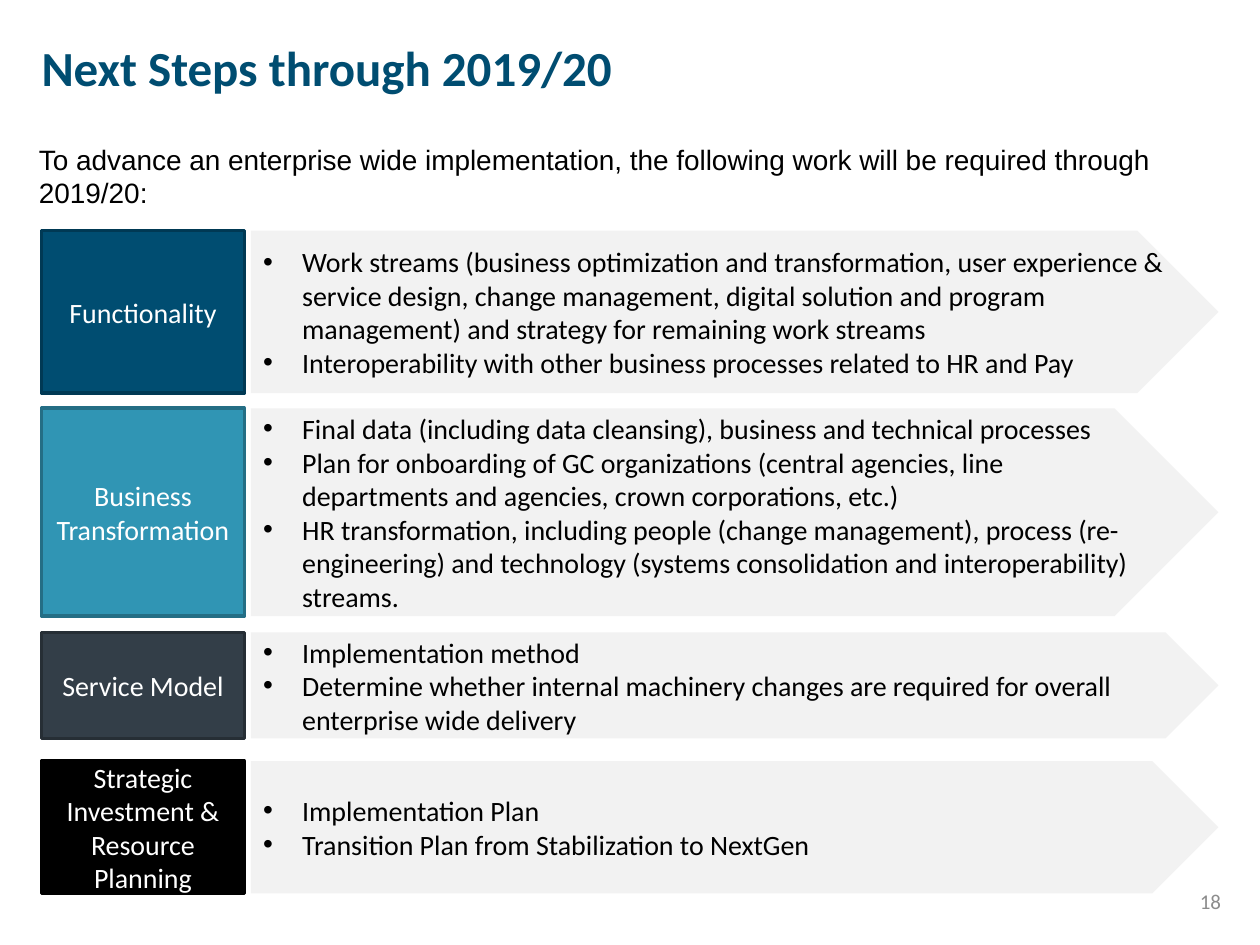
from lxml import etree
from pptx import Presentation
from pptx.dml.color import RGBColor
from pptx.enum.shapes import MSO_SHAPE
from pptx.enum.text import MSO_ANCHOR, PP_ALIGN
from pptx.oxml.ns import qn
from pptx.util import Inches, Pt

LEFT, CENTER, RIGHT = PP_ALIGN.LEFT, PP_ALIGN.CENTER, PP_ALIGN.RIGHT
TOP, MIDDLE = MSO_ANCHOR.TOP, MSO_ANCHOR.MIDDLE
RECTANGLE, ARROW = MSO_SHAPE.RECTANGLE, MSO_SHAPE.PENTAGON

NAVY, NAVY_EDGE = RGBColor(0x00, 0x4D, 0x71), RGBColor(0x00, 0x39, 0x54)
TEAL, TEAL_EDGE = RGBColor(0x30, 0x95, 0xB4), RGBColor(0x24, 0x6E, 0x85)
SLATE, SLATE_EDGE = RGBColor(0x33, 0x3E, 0x48), RGBColor(0x26, 0x2E, 0x35)
BLACK, WHITE = RGBColor(0, 0, 0), RGBColor(0xFF, 0xFF, 0xFF)
PALE, GREY = RGBColor(0xF2, 0xF2, 0xF2), RGBColor(0x8C, 0x8C, 0x8C)

TITLE = "Next Steps through 2019/20"
INTRO = ("To advance an enterprise wide implementation, the following work "
         "will be required through 2019/20:")
PAGE_NUMBER = "18"

# name, fill, edge, top, height, steps
STREAMS = [
    ("Functionality", NAVY, NAVY_EDGE, 1.83, 1.29, [
        "Work streams (business optimization and transformation, user experience & "
        "service design, change management, digital solution and program "
        "management) and strategy for remaining work streams",
        "Interoperability with other business processes related to HR and Pay",
    ]),
    ("Business Transformation", TEAL, TEAL_EDGE, 3.24, 1.65, [
        "Final data (including data cleansing), business and technical processes",
        "Plan for onboarding of GC organizations (central agencies, line "
        "departments and agencies, crown corporations, etc.)",
        "HR transformation, including people (change management), process "
        "(re-engineering) and technology (systems consolidation and "
        "interoperability) streams.",
    ]),
    ("Service Model", SLATE, SLATE_EDGE, 5.02, 0.84, [
        "Implementation method",
        "Determine whether internal machinery changes are required for overall "
        "enterprise wide delivery",
    ]),
    ("Strategic Investment & Resource Planning", BLACK, BLACK, 6.04, 1.05, [
        "Implementation Plan",
        "Transition Plan from Stabilization to NextGen",
    ]),
]

MARGIN, NAME_WIDTH, GUTTER, STEPS_WIDTH = 0.33, 1.61, 0.05, 7.68
STEPS_LEFT = MARGIN + NAME_WIDTH + GUTTER
BULLET_INDENT = Inches(0.31)


def add_bullet(paragraph):
    properties = paragraph._p.get_or_add_pPr()
    properties.set("marL", str(BULLET_INDENT))
    properties.set("indent", str(-BULLET_INDENT))
    etree.SubElement(properties, qn("a:buFont")).set("typeface", "Arial")
    etree.SubElement(properties, qn("a:buChar")).set("char", "•")


def write(holder, lines, color, size=16, font="Calibri", bold=False,
          align=LEFT, anchor=MIDDLE, bullets=False):
    frame = holder.text_frame
    frame.word_wrap = True
    frame.vertical_anchor = anchor
    for index, line in enumerate(lines):
        paragraph = frame.add_paragraph() if index else frame.paragraphs[0]
        paragraph.alignment = align
        if bullets:
            add_bullet(paragraph)
        run = paragraph.add_run()
        run.text = line
        for name, value in {"name": font, "size": Pt(size), "bold": bold}.items():
            setattr(run.font, name, value)
        run.font.color.rgb = color
    return frame


def add_block(slide, kind, left, top, width, height, fill, edge=None):
    block = slide.shapes.add_shape(kind, *map(Inches, (left, top, width, height)))
    block.shadow.inherit = False
    block.fill.solid()
    block.fill.fore_color.rgb = fill
    if edge is None:
        block.line.fill.background()
    else:
        block.line.color.rgb = edge
        block.line.width = Pt(2)
    return block


def add_text(slide, left, top, width, height, text, color, **style):
    box = slide.shapes.add_textbox(*map(Inches, (left, top, width, height)))
    return write(box, [text], color, **style)


def main():
    deck = Presentation()
    deck.slide_width, deck.slide_height = Inches(10), Inches(7.5)
    slide = deck.slides.add_slide(deck.slide_layouts[6])

    title = add_text(slide, MARGIN, 0.3, 9.8 - MARGIN, 0.57, TITLE, NAVY,
                     size=28, bold=True, anchor=TOP)
    for side in ("left", "top", "right", "bottom"):
        setattr(title, f"margin_{side}", 0)
    add_text(slide, 0.21, 1.08, 9.51, 0.64, INTRO, BLACK, font="Arial", anchor=TOP)

    for name, fill, edge, top, height, steps in STREAMS:
        label = add_block(slide, RECTANGLE, MARGIN, top, NAME_WIDTH, height, fill, edge)
        write(label, [name], WHITE, align=CENTER)
        arrow = add_block(slide, ARROW, STEPS_LEFT, top, STEPS_WIDTH, height, PALE)
        write(arrow, steps, BLACK, bullets=True)

    add_text(slide, 7.46, 6.95, 2.33, 0.4, PAGE_NUMBER, GREY, size=12, align=RIGHT)
    deck.save("out.pptx")


if __name__ == "__main__":
    main()
